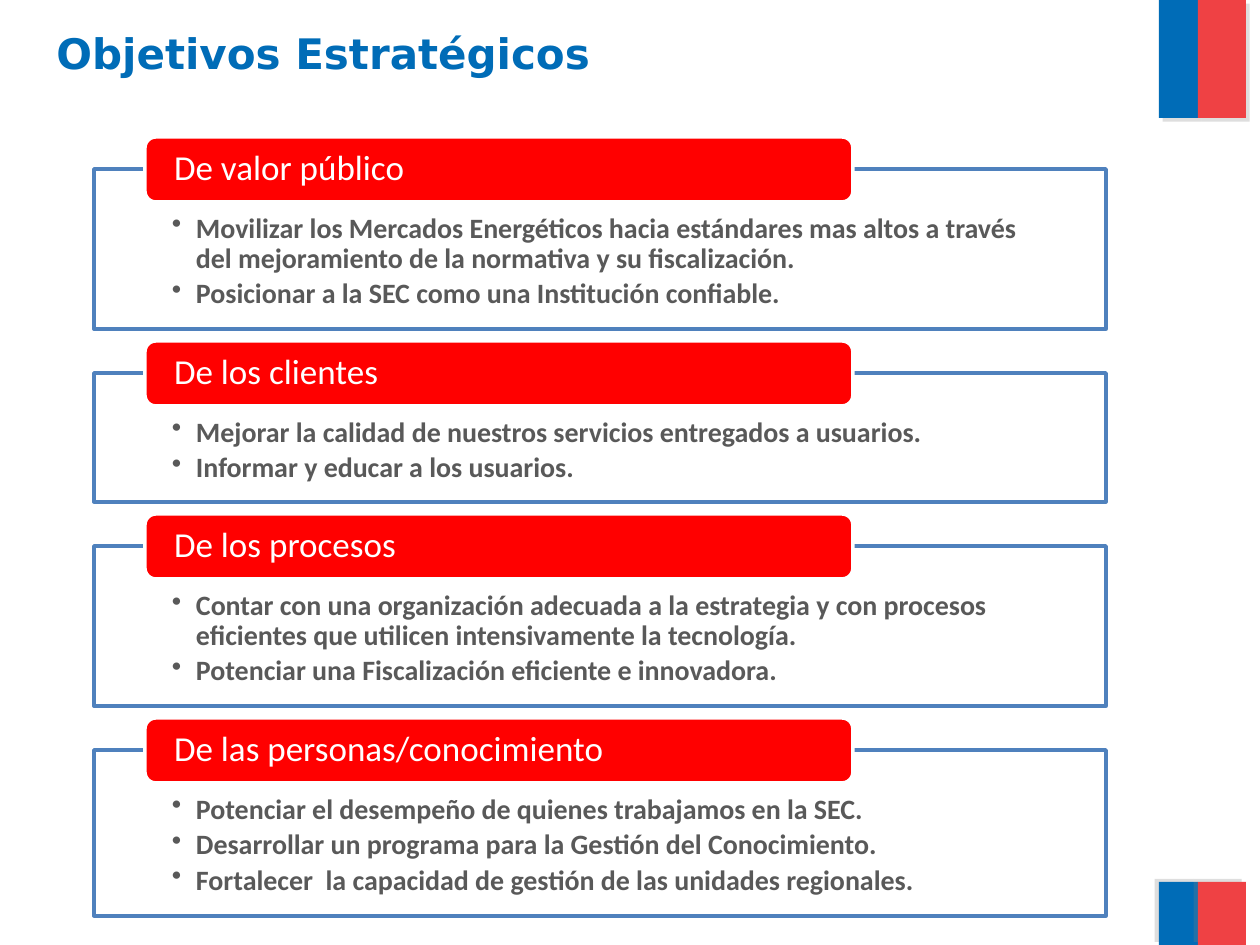
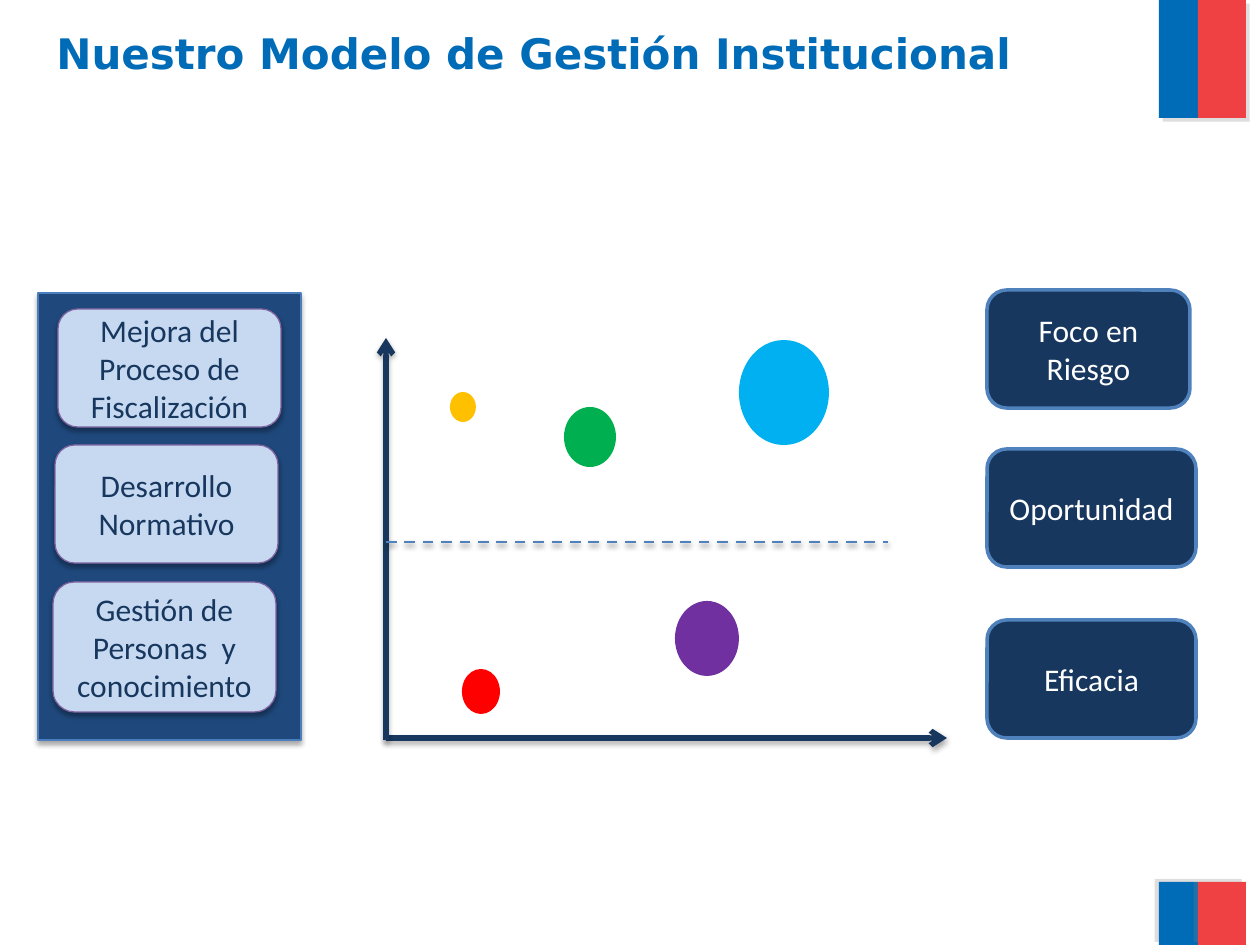
from lxml import etree
from pptx import Presentation, util as u
from pptx.dml.color import RGBColor
from pptx.enum import dml, shapes as sh, text as tx
from pptx.oxml import ns

PX = 914400 / 126
BLUE, CORAL = "006CB7", "EF4144"
EDGE, NAVY, WHITE = "4F81BD", "17375E", "FFFFFF"
SANS, BODY = "DejaVu Sans", "Calibri"
RECT, ROUND, OVAL = (sh.MSO_SHAPE.RECTANGLE, sh.MSO_SHAPE.ROUNDED_RECTANGLE,
                     sh.MSO_SHAPE.OVAL)
# colour, opacity %, blur pt, distance pt, angle
SOFT = ("000000", 35, 3.1, 1.8, 90)
FAINT = ("000000", 38, 3.1, 1.6, 90)

GOALS = [
    ("De valor público", 160, [
        "Movilizar los Mercados Energéticos hacia estándares mas altos a través "
        "del mejoramiento de la normativa y su fiscalización.",
        "Posicionar a la SEC como una Institución confiable."]),
    ("De los clientes", 129, [
        "Mejorar la calidad de nuestros servicios entregados a usuarios.",
        "Informar y educar a los usuarios."]),
    ("De los procesos", 160, [
        "Contar con una organización adecuada a la estrategia y con procesos "
        "eficientes que utilicen intensivamente la tecnología.",
        "Potenciar una Fiscalización eficiente e innovadora."]),
    ("De las personas/conocimiento", 166, [
        "Potenciar el desempeño de quienes trabajamos en la SEC.",
        "Desarrollar un programa para la Gestión del Conocimiento.",
        "Fortalecer  la capacidad de gestión de las unidades regionales."]),
]
# left, top, width, height inside the panel
PILLS = [
    ("Mejora del Proceso de Fiscalización", 20, 16, 223, 118),
    ("Desarrollo Normativo", 17, 152, 223, 118),
    ("Gestión de Personas  y conocimiento", 15, 289, 223, 130),
]
# top inside the column, width
AIMS = [("Foco en Riesgo", 0, 203), ("Oportunidad", 159, 209), ("Eficacia", 330, 209)]
# colour, left, top, width, height inside the plot
BUBBLES = [
    ("FF0000", 76, 331, 38, 45),
    ("7030A0", 289, 263, 64, 75),
    ("00B0F0", 353, 2, 90, 105),
    ("00B050", 178, 69, 52, 60),
    ("FFC000", 64, 54, 26, 30),
]


def px(n):
    return u.Emu(round(n * PX))


def rgb(code):
    return RGBColor.from_string(code)


def sub(node, tag, **attrs):
    return etree.SubElement(node, ns.qn(tag), {k: str(v) for k, v in attrs.items()})


def shade(item, cast=None):
    """Give a shape or connector its own effect list, empty or with one shadow."""
    props = item._element.spPr
    for old in props.findall(ns.qn("a:effectLst")):
        props.remove(old)
    fx = sub(props, "a:effectLst")
    if cast:
        code, alpha, blur, dist, turn = cast
        drop = sub(fx, "a:outerShdw", blurRad=u.Pt(blur), dist=u.Pt(dist),
                   dir=turn * 60000, algn="ctr", rotWithShape=0)
        sub(sub(drop, "a:srgbClr", val=code), "a:alpha", val=alpha * 1000)


def block(slide, kind, box, fill, line=None, thick=2, cast=None):
    item = slide.shapes.add_shape(kind, *map(px, box))
    item.shadow.inherit = False
    item.fill.solid()
    item.fill.fore_color.rgb = rgb(fill)
    if line:
        item.line.color.rgb = rgb(line)
        item.line.width = u.Pt(thick)
    else:
        item.line.fill.background()
    shade(item, cast)
    return item


def inset(frame, left, top, right, low):
    frame.margin_left, frame.margin_top = px(left), px(top)
    frame.margin_right, frame.margin_bottom = px(right), px(low)


def style(para, size, code, bold=False, name=BODY, align=tx.PP_ALIGN.LEFT):
    para.alignment = align
    for run in para.runs:
        font = run.font
        font.size, font.name, font.bold = u.Pt(size), name, bold
        font.color.rgb = rgb(code)


def label(item, words, size, code, align=tx.PP_ALIGN.CENTER):
    frame = item.text_frame
    frame.word_wrap = True
    frame.vertical_anchor = tx.MSO_ANCHOR.MIDDLE
    frame.text = words
    style(frame.paragraphs[0], size, code, align=align)
    return frame


def bullets(item, lines):
    frame = item.text_frame
    frame.word_wrap = True
    frame.vertical_anchor = tx.MSO_ANCHOR.TOP
    inset(frame, 78, 45, 78, 15)
    for i, words in enumerate(lines):
        para = frame.add_paragraph() if i else frame.paragraphs[0]
        para.text = words
        props = para._p.get_or_add_pPr()
        props.set("marL", str(px(24)))
        props.set("indent", str(-px(24)))
        sub(props, "a:buChar", char="•")
        para.line_spacing, para.space_after = 0.9, u.Pt(3)
        style(para, 16, "595959", bold=True)


def flag(slide, top, high, turn):
    cast = ("808080", 25, 0, 3, turn)
    for code, left, wide in ((BLUE, 1159, 39), (CORAL, 1198, 48)):
        block(slide, RECT, (left, top, wide, high), code, cast=cast)


def page(deck, title):
    slide = deck.slides.add_slide(deck.slide_layouts[6])
    flag(slide, 0, 118, 45)
    flag(slide, 882, 63, 215)
    frame = slide.shapes.add_textbox(*map(px, (44, 21, 1101, 158))).text_frame
    frame.word_wrap = True
    frame.text = title
    style(frame.paragraphs[0], 24, BLUE, bold=True, name=SANS)
    return slide


def goal(slide, box, head, lines):
    """Framed list with a red tab across its top edge."""
    left, top, wide, high = box
    card = block(slide, RECT, box, WHITE, EDGE)
    tint = card._element.spPr.find(ns.qn("a:solidFill"))
    sub(tint[0], "a:alpha", val=90000)
    bullets(card, lines)
    tab = block(slide, ROUND, (left + 51, top - 32, 708, 65), "FF0000", WHITE)
    frame = label(tab, head, 20, WHITE, tx.PP_ALIGN.LEFT)
    inset(frame, 26, 0, 26, 0)
    frame.paragraphs[0].line_spacing = 0.9


def goals(slide, left, top, wide, gap):
    for head, high, lines in GOALS:
        goal(slide, (left, top, wide, high), head, lines)
        top += high + gap


def panel(slide, box):
    block(slide, RECT, box, "1F497D", "4B7EBC", 0.75, SOFT)
    for words, dx, dy, wide, high in PILLS:
        pill = block(slide, ROUND, (box[0] + dx, box[1] + dy, wide, high),
                     "C6D9F1", "8064A2", 0.75, SOFT)
        label(pill, words, 18, NAVY)


def aims(slide, left, top):
    for words, dy, wide in AIMS:
        item = block(slide, ROUND, (left, top + dy, wide, 118), NAVY, EDGE)
        label(item, words, 18, WHITE)


def rule(slide, ends, code, thick, cast, arrow=False):
    """Straight line, ending in an arrowhead or else dashed."""
    item = slide.shapes.add_connector(sh.MSO_CONNECTOR.STRAIGHT, *map(px, ends))
    item.line.color.rgb = rgb(code)
    item.line.width = u.Pt(thick)
    if arrow:
        sub(item.line._get_or_add_ln(), "a:tailEnd", type="arrow")
    else:
        item.line.dash_style = dml.MSO_LINE.DASH
    shade(item, cast)


def plot(slide, box):
    left, top, wide, high = box
    for code, dx, dy, w, h in BUBBLES:
        block(slide, OVAL, (left + dx, top + dy, w, h), code)
    base, mid = top + high, top + 204
    rule(slide, (left, base, left + wide, base), NAVY, 3, SOFT, True)
    rule(slide, (left, base + 2, left, top), NAVY, 3, SOFT, True)
    rule(slide, (left, mid, left + 502, mid), EDGE, 1.5, FAINT)


def main():
    deck = Presentation()
    deck.slide_width, deck.slide_height = px(1260), px(945)
    goals(page(deck, "Objetivos Estratégicos"), 94, 169, 1012, 44)
    model = page(deck, "Nuestro Modelo de Gestión Institucional")
    panel(model, (38, 293, 263, 447))
    aims(model, 987, 290)
    plot(model, (386, 338, 561, 400))
    deck.save("out.pptx")


if __name__ == "__main__":
    main()
